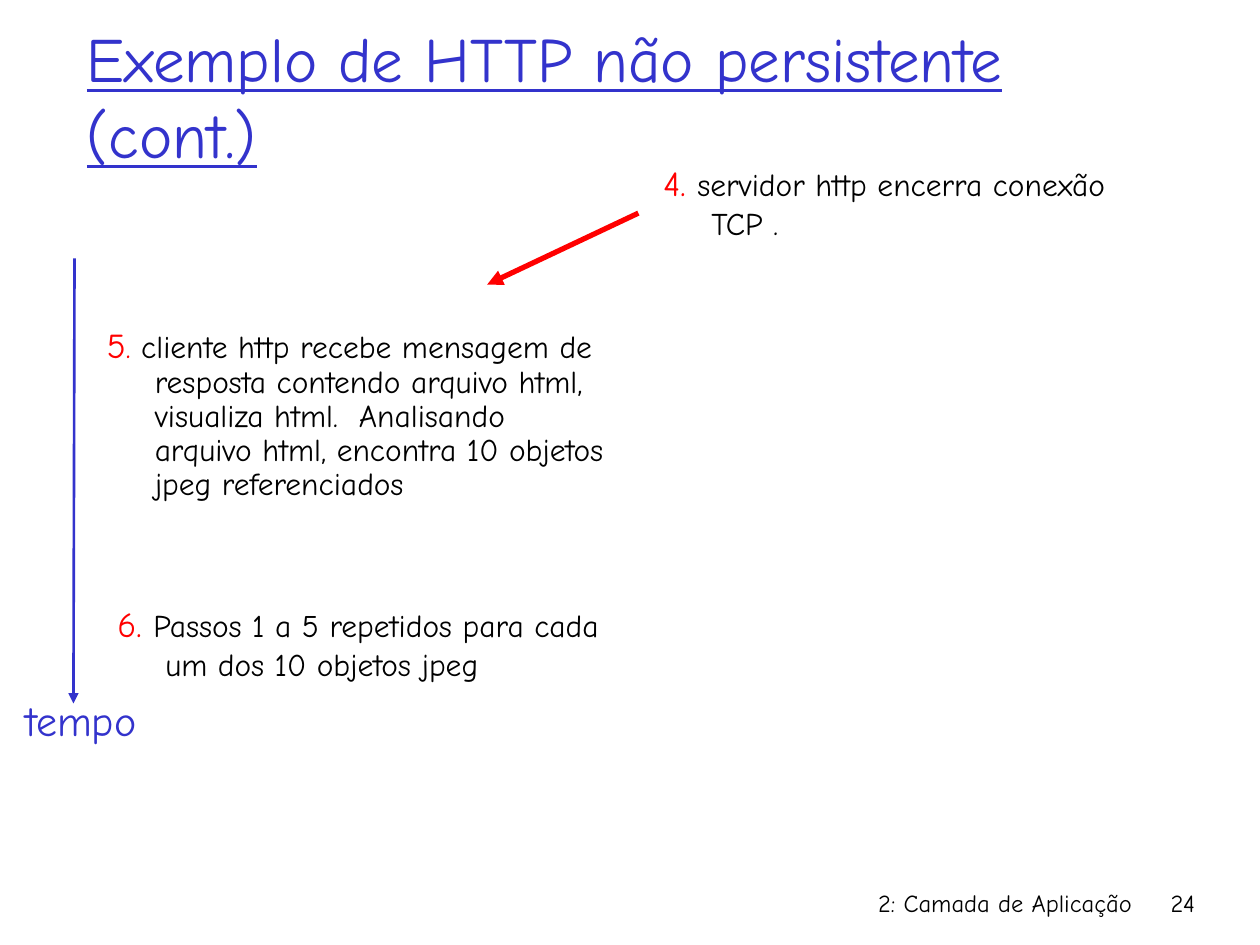
from typing import NamedTuple

import pptx
import pptx.dml.color
import pptx.enum.dml
import pptx.enum.shapes
import pptx.enum.text
import pptx.oxml
import pptx.oxml.ns
import pptx.util

RGB = pptx.dml.color.RGBColor
BLACK = RGB(0x00, 0x00, 0x00)
BLUE = RGB(0x33, 0x33, 0xCC)
RED = RGB(0xFF, 0x00, 0x00)
FONT = "Comic Neue"
ALIGN = pptx.enum.text.PP_ALIGN
ANCHOR = pptx.enum.text.MSO_ANCHOR
COLS = 120
ROWS = 90
WIDE = pptx.util.Inches(10)
HIGH = pptx.util.Inches(7.5)
HANG = pptx.util.Inches(0.38)


class Run(NamedTuple):
    text: str
    size: int
    color: RGB
    under: bool = False


class Label(NamedTuple):
    left: float
    top: float
    width: float
    height: float
    runs: tuple[Run, ...]
    align: ALIGN = ALIGN.LEFT
    anchor: ANCHOR = ANCHOR.TOP
    wrap: bool = True
    hang: bool = False
    pitch: float = 1.0


class Arrow(NamedTuple):
    start: tuple[float, float]
    end: tuple[float, float]
    color: RGB
    weight: float


def col(count: float) -> int:
    return round(WIDE * count / COLS)


def row(count: float) -> int:
    return round(HIGH * count / ROWS)


def step(left: float, top: float, height: float, mark: Run, dot: Run,
         text: str, pitch: float = 1.0) -> Label:
    runs = (mark, dot, Run(text, 18, BLACK))
    return Label(left, top, 50, height, runs, hang=True, pitch=pitch)


def write(slide, label: Label) -> None:
    box = slide.shapes.add_textbox(
        col(label.left), row(label.top), col(label.width), row(label.height))
    frame = box.text_frame
    frame.word_wrap = label.wrap
    frame.vertical_anchor = label.anchor
    para = frame.paragraphs[0]
    para.alignment = label.align
    para.line_spacing = label.pitch
    if label.hang:
        props = para._p.get_or_add_pPr()
        props.set("marL", str(HANG))
        props.set("indent", str(-HANG))
    for part in label.runs:
        run = para.add_run()
        run.text = part.text
        run.font.name = FONT
        run.font.size = pptx.util.Pt(part.size)
        run.font.color.rgb = part.color
        run.font.underline = part.under


def point(slide, arrow: Arrow) -> None:
    line = slide.shapes.add_connector(
        pptx.enum.shapes.MSO_CONNECTOR.STRAIGHT,
        col(arrow.start[0]), row(arrow.start[1]),
        col(arrow.end[0]), row(arrow.end[1]))
    line.line.color.rgb = arrow.color
    line.line.width = pptx.util.Pt(arrow.weight)
    space = pptx.oxml.ns.nsdecls("a")
    head = pptx.oxml.parse_xml(f'<a:tailEnd {space} type="triangle"/>')
    line.line._get_or_add_ln().append(head)
    line._element.spPr.append(pptx.oxml.parse_xml(f"<a:effectLst {space}/>"))


LABELS = (
    Label(71, 84, 38, 6, (Run("2: Camada de Aplicação", 14, BLACK),), ALIGN.RIGHT),
    Label(109, 84, 6, 6, (Run("24", 14, BLACK),), ALIGN.RIGHT),
    Label(7.1, 3.4, 102, 11.4,
          (Run("Exemplo de HTTP não persistente (cont.)", 36, BLUE, True),),
          anchor=ANCHOR.MIDDLE),
    step(9, 30.7, 20.2, Run("5", 20, RED), Run(".", 18, RED),
         " cliente http recebe mensagem de resposta contendo arquivo html, "
         "visualiza html.  Analisando arquivo html, encontra 10 objetos "
         "jpeg referenciados", 0.9),
    step(10, 56.8, 8.8, Run("6", 20, RED), Run(". ", 20, RED),
         "Passos 1 a 5 repetidos para cada um dos 10 objetos jpeg"),
    step(62, 14.8, 9.6, Run("4", 20, RED), Run(". ", 20, RED),
         "servidor http encerra conexão TCP ."),
    Label(0.8, 65.6, 13.8, 6, (Run("tempo", 24, BLUE),), ALIGN.CENTER, wrap=False),
)

ARROWS = (
    Arrow((7.1, 24.6), (7, 67), BLUE, 1.5),
    Arrow((60.8, 20.3), (46.4, 27.1), RED, 3),
)


def main() -> None:
    deck = pptx.Presentation()
    deck.slide_width = WIDE
    deck.slide_height = HIGH
    slide = deck.slides.add_slide(deck.slide_layouts[6])
    for label in LABELS:
        write(slide, label)
    for arrow in ARROWS:
        point(slide, arrow)
    deck.save("out.pptx")


if __name__ == "__main__":
    main()
